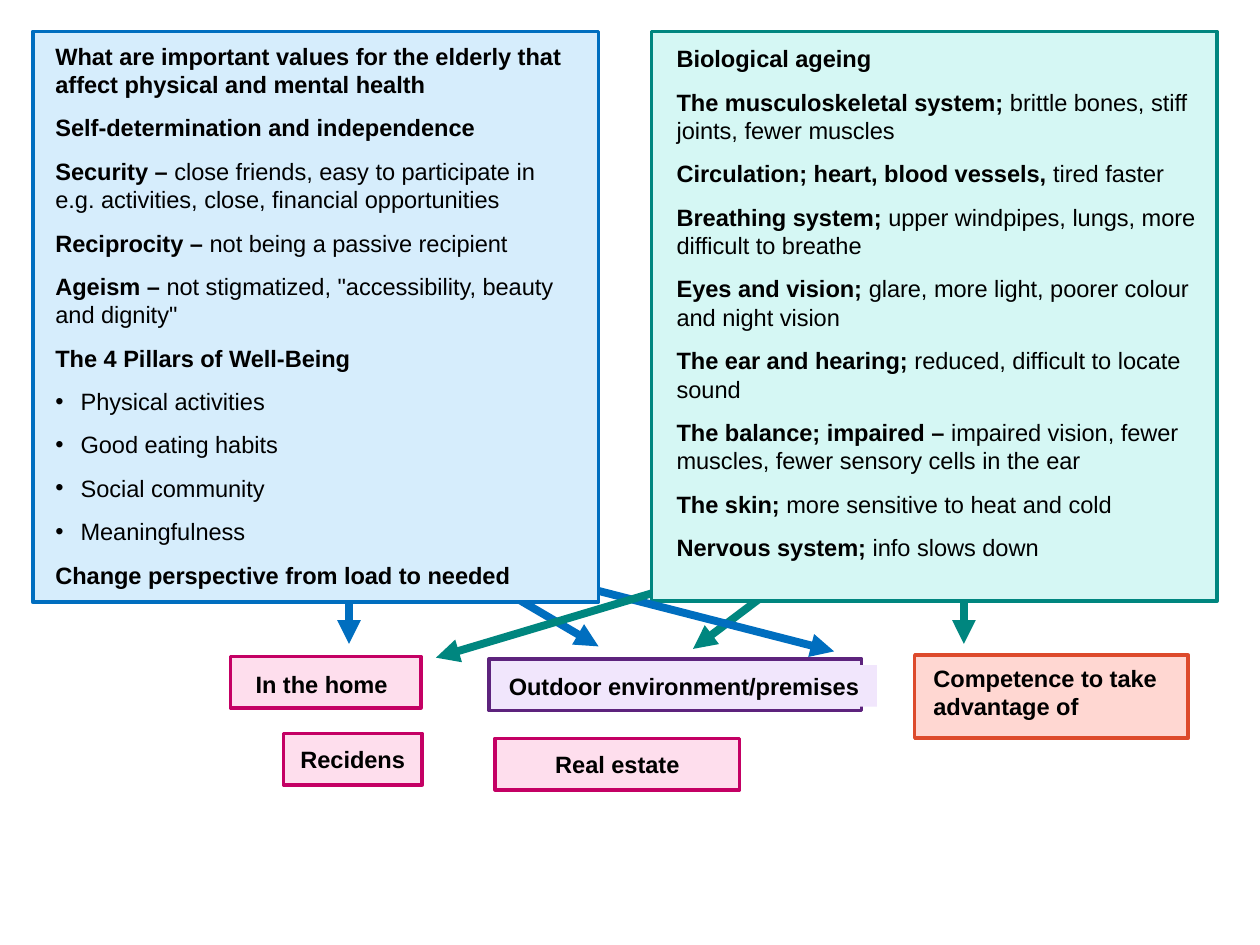
import pptx
import pptx.dml.color
import pptx.enum.shapes
import pptx.enum.text
import pptx.oxml
import pptx.oxml.ns
import pptx.util
from lxml import etree

RGB = pptx.dml.color.RGBColor
ALIGN = pptx.enum.text.PP_ALIGN
ANCHOR = pptx.enum.text.MSO_ANCHOR
RECTANGLE = pptx.enum.shapes.MSO_SHAPE.RECTANGLE
STRAIGHT = pptx.enum.shapes.MSO_CONNECTOR.STRAIGHT
Pt = pptx.util.Pt

BLACK = RGB(0x00, 0x00, 0x00)
BLUE, PALE_BLUE = RGB(0x00, 0x6E, 0xBF), RGB(0xD6, 0xED, 0xFC)
TEAL, PALE_TEAL = RGB(0x00, 0x86, 0x7F), RGB(0xD5, 0xF7, 0xF4)
PINK, PALE_PINK = RGB(0xC4, 0x00, 0x64), RGB(0xFE, 0xDE, 0xED)
PURPLE, PALE_PURPLE = RGB(0x5D, 0x23, 0x7D), RGB(0xF1, 0xE6, 0xFC)
RED, PALE_RED = RGB(0xDD, 0x4A, 0x2C), RGB(0xFF, 0xD7, 0xD2)

COLUMNS, ROWS = 100, 75
SLIDE_WIDTH, SLIDE_HEIGHT = pptx.util.Inches(10), pptx.util.Inches(7.5)
FONT = {"name": "Arial", "size": Pt(13.5)}
SPACING = {"space_before": Pt(2.6), "space_after": Pt(6)}
NO_INSETS = dict.fromkeys(
    ("margin_left", "margin_top", "margin_right", "margin_bottom"), 0)
CENTRED = {"word_wrap": True, "vertical_anchor": ANCHOR.MIDDLE}
FITTED = {"word_wrap": False, "vertical_anchor": ANCHOR.TOP,
          "auto_size": pptx.enum.text.MSO_AUTO_SIZE.SHAPE_TO_FIT_TEXT}

VALUES = [
    ("What are important values for the elderly that affect physical and mental health", ""),
    ("Self-determination and independence", ""),
    ("Security – ", "close friends, easy to participate in e.g. activities, close, "
                    "financial opportunities"),
    ("Reciprocity – ", "not being a passive recipient"),
    ("Ageism – ", "not stigmatized, \"accessibility, beauty and dignity\""),
    ("The 4 Pillars of Well-Being", ""),
    ("", "Physical activities"),
    ("", "Good eating habits"),
    ("", "Social community"),
    ("", "Meaningfulness"),
    ("Change perspective from load to needed", ""),
]
AGEING = [
    ("Biological ageing", ""),
    ("The musculoskeletal system; ", "brittle bones, stiff joints, fewer muscles"),
    ("Circulation; heart, blood vessels, ", "tired faster"),
    ("Breathing system; ", "upper windpipes, lungs, more difficult to breathe"),
    ("Eyes and vision; ", "glare, more light, poorer colour and night vision"),
    ("The ear and hearing; ", "reduced, difficult to locate sound"),
    ("The balance; impaired – ", "impaired vision, fewer muscles, fewer sensory cells in the ear"),
    ("The skin; ", "more sensitive to heat and cold"),
    ("Nervous system; ", "info slows down"),
]
PANELS = [
    ((2.6, 2.5, 44.9, 45.3), (1.8, 0.8, 41.3, 33.7), BLUE, PALE_BLUE, VALUES),
    ((51.7, 2.5, 44.9, 45.2), (2, 1, 42.5, 28.5), TEAL, PALE_TEAL, AGEING),
]
ARROWS_BEHIND = [
    ((40, 46.9), (47.5, 51.3), BLUE),
    ((61.1, 46.9), (55, 51.5), TEAL),
]
ARROWS_IN_FRONT = [
    ((47.5, 46.9), (66.2, 51.7), BLUE),
    ((51.7, 47.1), (34.6, 52.2), TEAL),
    ((76.5, 47.7), (76.5, 51.1), TEAL),
    ((27.7, 47.8), (27.7, 51.1), BLUE),
]
PLACES = [
    ((72.6, 52, 21.7, 6.6), (0.5, 0.2, 20.5, 5.6), RED, PALE_RED,
     ["Competence to take", "advantage of"]),
    ((38.8, 52.3, 29.6, 4.1), (0.6, 0.5, 30.2, 3.3), PURPLE, PALE_PURPLE,
     ["Outdoor environment/premises"]),
    ((18.3, 52.1, 15.1, 4.1), (1, 0.6, 13.2, 3.3), PINK, PALE_PINK, ["In the home"]),
    ((22.5, 58.2, 11, 4.1), None, PINK, PALE_PINK, ["Recidens"]),
    ((39.3, 58.6, 19.4, 4.1), None, PINK, PALE_PINK, ["Real estate"]),
]


def across(columns):
    """Turn grid columns into a length."""
    return round(SLIDE_WIDTH * columns / COLUMNS)


def down(rows):
    """Turn grid rows into a length."""
    return round(SLIDE_HEIGHT * rows / ROWS)


def on_grid(box):
    """Turn a grid box into left, top, width and height."""
    left, top, width, height = box
    return across(left), down(top), across(width), down(height)


def inside(box, inner):
    """Move an inner box from its parent's corner to the slide's."""
    return box[0] + inner[0], box[1] + inner[1], inner[2], inner[3]


def apply(target, formats):
    """Set every attribute named in a dict of format values."""
    for attribute, value in formats.items():
        setattr(target, attribute, value)


def add_words(paragraph, words, bold):
    """Add one run in the slide's typeface."""
    run = paragraph.add_run()
    run.text = words
    apply(run.font, {**FONT, "bold": bold})
    run.font.color.rgb = BLACK


def add_bullet(paragraph):
    """Give a paragraph a hanging round bullet."""
    properties = paragraph._p.get_or_add_pPr()
    properties.set("marL", str(across(2)))
    properties.set("indent", str(-across(2)))
    for tag, attribute, value in (
        ("a:buFont", "typeface", FONT["name"]),
        ("a:buChar", "char", "•"),
    ):
        etree.SubElement(properties, pptx.oxml.ns.qn(tag)).set(attribute, value)


def add_rectangle(slide, box, fill, outline=None):
    """Draw a flat rectangle, outlined if a colour is given."""
    rectangle = slide.shapes.add_shape(RECTANGLE, *on_grid(box))
    rectangle.shadow.inherit = False
    rectangle.fill.solid()
    rectangle.fill.fore_color.rgb = fill
    if outline is None:
        rectangle.line.fill.background()
    else:
        rectangle.line.color.rgb = outline
        rectangle.line.width = Pt(2)
    return rectangle


def add_panel(slide, box, body, outline, fill, topics):
    """Draw a framed panel with its list of topics."""
    add_rectangle(slide, box, fill, outline)
    frame = slide.shapes.add_textbox(*on_grid(inside(box, body))).text_frame
    apply(frame, {**NO_INSETS, "word_wrap": True})
    for number, (lead, detail) in enumerate(topics):
        paragraph = frame.add_paragraph() if number else frame.paragraphs[0]
        if not lead:
            add_bullet(paragraph)
        apply(paragraph, SPACING if number else {"space_after": Pt(6)})
        for words, bold in ((lead, True), (detail, False)):
            if words:
                add_words(paragraph, words, bold)


def add_place(slide, box, caption, outline, fill, lines):
    """Draw a framed place with its name, in a caption box if one is given."""
    holder = add_rectangle(slide, box, fill, outline)
    if caption:
        holder = add_rectangle(slide, inside(box, caption), fill)
    frame = holder.text_frame
    apply(frame, FITTED if caption else CENTRED)
    for number, words in enumerate(lines):
        paragraph = frame.add_paragraph() if number else frame.paragraphs[0]
        paragraph.alignment = ALIGN.LEFT if caption else ALIGN.CENTER
        add_words(paragraph, words, True)


def add_arrow(slide, start, end, colour):
    """Draw an arrow between two grid points."""
    arrow = slide.shapes.add_connector(
        STRAIGHT, across(start[0]), down(start[1]), across(end[0]), down(end[1]))
    arrow.line.color.rgb = colour
    arrow.line.width = Pt(4.5)
    head = etree.SubElement(arrow.line._get_or_add_ln(), pptx.oxml.ns.qn("a:tailEnd"))
    head.set("type", "triangle")
    etree.SubElement(arrow._element.spPr, pptx.oxml.ns.qn("a:effectLst"))


def main():
    """Build the slide on healthy ageing and save it."""
    deck = pptx.Presentation()
    apply(deck, {"slide_width": SLIDE_WIDTH, "slide_height": SLIDE_HEIGHT})
    slide = deck.slides.add_slide(deck.slide_layouts[6])
    for add_part, parts in (
        (add_arrow, ARROWS_BEHIND),
        (add_panel, PANELS),
        (add_arrow, ARROWS_IN_FRONT),
        (add_place, PLACES),
    ):
        for part in parts:
            add_part(slide, *part)
    deck.save("out.pptx")


if __name__ == "__main__":
    main()
